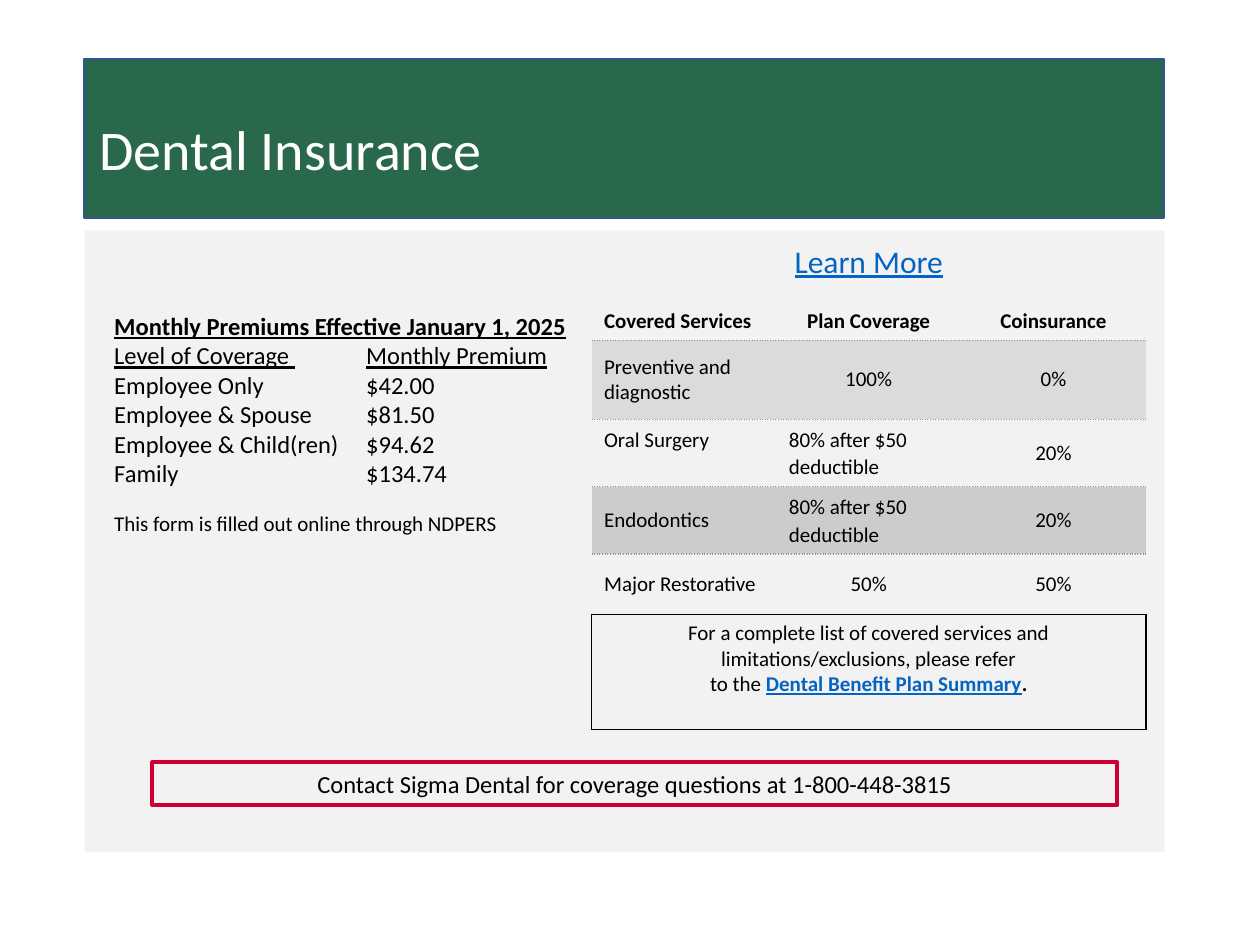
from dataclasses import dataclass

from lxml import etree
from pptx import Presentation
from pptx.dml.color import RGBColor
from pptx.enum.shapes import MSO_SHAPE
from pptx.enum.text import MSO_ANCHOR, PP_ALIGN
from pptx.oxml.ns import qn
from pptx.util import Pt

RECTANGLE = MSO_SHAPE.RECTANGLE
LEFT, CENTER = PP_ALIGN.LEFT, PP_ALIGN.CENTER
TOP, MIDDLE = MSO_ANCHOR.TOP, MSO_ANCHOR.MIDDLE


@dataclass(frozen=True)
class Theme:
    font: str = "Calibri"
    title: float = 32
    heading: float = 18
    body: float = 14
    small: float = 12
    black: str = "000000"
    white: str = "FFFFFF"
    green: str = "2A684B"
    blue: str = "325491"
    panel: str = "F2F2F2"
    link: str = "0563C1"
    red: str = "CC0033"
    light_row: str = "DBDBDB"
    dark_row: str = "CCCCCC"
    rule: str = "939598"


THEME = Theme()
DOTTED = (THEME.rule, 0.75, "sysDot")
SOLID = (THEME.black, 1, "solid")

PREMIUMS = [
    ("Employee Only", "$42.00"),
    ("Employee & Spouse", "$81.50"),
    ("Employee & Child(ren)", "$94.62"),
    ("Family", "$134.74"),
]
# Each row: height, fill, cell texts
SERVICES = [
    (21, None, ("Covered Services", "Plan Coverage", "Coinsurance")),
    (45.2, THEME.light_row, ("Preventive and diagnostic", "100%", "0%")),
    (38.5, None, ("Oral Surgery", "80% after $50 deductible", "20%")),
    (38.5, THEME.dark_row, ("Endodontics", "80% after $50 deductible", "20%")),
    (34.5, None, ("Major Restorative", "50%", "50%")),
]
FOOTNOTE_HEIGHT = 65.8


def write_text(frame, paragraphs, size=THEME.small, color=THEME.black, bold=False,
               underline=False, align=LEFT, spacing=None, tab=None):
    """Fill a frame; a paragraph is a string or a list of (text, overrides) runs."""
    frame.word_wrap = True
    for index, content in enumerate(paragraphs):
        paragraph = frame.paragraphs[0] if index == 0 else frame.add_paragraph()
        paragraph.alignment = align
        if spacing:
            paragraph.line_spacing = spacing
        if tab:
            tab_list = etree.SubElement(paragraph._p.get_or_add_pPr(), qn("a:tabLst"))
            etree.SubElement(tab_list, qn("a:tab"), pos=str(Pt(tab)), algn="l")
        runs = [(content, {})] if isinstance(content, str) else content
        for text, changes in runs:
            run = paragraph.add_run()
            run.text = text
            run.font.name = THEME.font
            run.font.size = Pt(size)
            run.font.bold = changes.get("bold", bold)
            run.font.underline = changes.get("underline", underline)
            run.font.color.rgb = RGBColor.from_string(changes.get("color", color))


def add_text(slide, box, paragraphs, anchor=TOP, **text_format):
    shape = slide.shapes.add_textbox(*map(Pt, box))
    shape.text_frame.vertical_anchor = anchor
    write_text(shape.text_frame, paragraphs, **text_format)


def add_rectangle(slide, box, fill=None, line=None, line_width=1):
    shape = slide.shapes.add_shape(RECTANGLE, *map(Pt, box))
    shape.shadow.inherit = False
    if fill:
        shape.fill.solid()
        shape.fill.fore_color.rgb = RGBColor.from_string(fill)
    else:
        shape.fill.background()
    if line:
        shape.line.color.rgb = RGBColor.from_string(line)
        shape.line.width = Pt(line_width)
    else:
        shape.line.fill.background()
    return shape


def style_cell(cell, fill=None, **borders):
    """Set the fill, then all four borders: left, right, top and bottom."""
    if fill:
        cell.fill.solid()
        cell.fill.fore_color.rgb = RGBColor.from_string(fill)
    else:
        cell.fill.background()
    properties = cell._tc.get_or_add_tcPr()
    for index, side in enumerate(("left", "right", "top", "bottom")):
        line = etree.Element(qn("a:ln" + side[0].upper()))
        properties.insert(index, line)
        if borders.get(side):
            color, width, dash = borders[side]
            line.set("w", str(Pt(width)))
            solid = etree.SubElement(line, qn("a:solidFill"))
            etree.SubElement(solid, qn("a:srgbClr"), val=color)
            etree.SubElement(line, qn("a:prstDash"), val=dash)
        else:
            etree.SubElement(line, qn("a:noFill"))


def add_header(slide, box):
    left, top, width, height = box
    add_rectangle(slide, box, THEME.green, THEME.blue)
    add_text(slide, (left + 1.5, top + 0.8, width, height + 13.7), ["Dental Insurance"],
             anchor=MIDDLE, size=THEME.title, color=THEME.white, spacing=0.9)


def add_premiums(slide, box):
    left, top, width, height = box
    rows = [
        [("Monthly Premiums Effective January 1, 2025", {"bold": True, "underline": True})],
        [("Level of Coverage ", {"underline": True}), ("\t", {}),
         ("Monthly Premium", {"underline": True})],
    ]
    rows += [f"{level}\t{premium}" for level, premium in PREMIUMS]
    add_text(slide, (left, top, width, 108.7), rows, size=THEME.body, tab=144)
    add_text(slide, (left, top + 113.8, width, height - 113.8),
             ["This form is filled out online through NDPERS"])


def add_services(slide, box):
    row_count, column_count = len(SERVICES) + 1, len(SERVICES[0][2])
    table = slide.shapes.add_table(row_count, column_count, *map(Pt, box)).table
    table.first_row = table.horz_banding = False
    for column in table.columns:
        column.width = Pt(box[2] / column_count)

    # Service rows
    for row, (height, fill, texts) in enumerate(SERVICES):
        table.rows[row].height = Pt(height)
        above = DOTTED if row else None
        below = SOLID if row == len(SERVICES) - 1 else DOTTED
        for column, text in enumerate(texts):
            cell = table.cell(row, column)
            cell.vertical_anchor = MIDDLE
            long_text = "deductible" in text
            write_text(cell.text_frame, [text], bold=row == 0,
                       align=CENTER if column and not long_text else LEFT,
                       spacing=1.07 if long_text else None)
            if text == "Oral Surgery":
                cell.vertical_anchor = TOP
                cell.margin_top = Pt(4.6)
            style_cell(cell, fill, top=above, bottom=below)

    # Framed footnote across the table
    table.rows[row_count - 1].height = Pt(FOOTNOTE_HEIGHT)
    footnote = table.cell(row_count - 1, 0)
    footnote.merge(table.cell(row_count - 1, column_count - 1))
    footnote.vertical_anchor = TOP
    write_text(footnote.text_frame, [
        "For a complete list of covered services and limitations/exclusions, please refer",
        [("to the ", {}),
         ("Dental Benefit Plan Summary", {"bold": True, "underline": True, "color": THEME.link}),
         (".", {"bold": True})],
    ], align=CENTER)
    for column in range(column_count):
        style_cell(table.cell(row_count - 1, column), top=SOLID, bottom=SOLID,
                   left=SOLID if column == 0 else None,
                   right=SOLID if column in (0, column_count - 1) else None)


def add_contact(slide, box):
    shape = add_rectangle(slide, box, line=THEME.red, line_width=2.25)
    shape.text_frame.vertical_anchor = MIDDLE
    write_text(shape.text_frame,
               ["Contact Sigma Dental for coverage questions at 1-800-448-3815"],
               size=THEME.body, align=CENTER)


def add_content(slide, box):
    left, top, width, _ = box
    add_rectangle(slide, box, THEME.panel)
    add_premiums(slide, (left + 9.7, top + 42.4, 280, 149.8))
    add_text(slide, (left + 279, top + 2.8, width - 279, 28.8), ["Learn More"],
             size=THEME.heading, color=THEME.link, underline=True, align=CENTER)
    table_height = sum(row[0] for row in SERVICES) + FOOTNOTE_HEIGHT
    add_services(slide, (left + 289.5, top + 41, 316.8, table_height))
    add_contact(slide, (left + 38.6, top + 303.8, 551.4, 24.5))


def main():
    presentation = Presentation()
    presentation.slide_width, presentation.slide_height = Pt(720), Pt(540)
    slide = presentation.slides.add_slide(presentation.slide_layouts[6])
    add_header(slide, (48.2, 33.8, 617, 90.7))
    add_content(slide, (48.5, 131.8, 617, 355))
    presentation.save("out.pptx")


if __name__ == "__main__":
    main()
